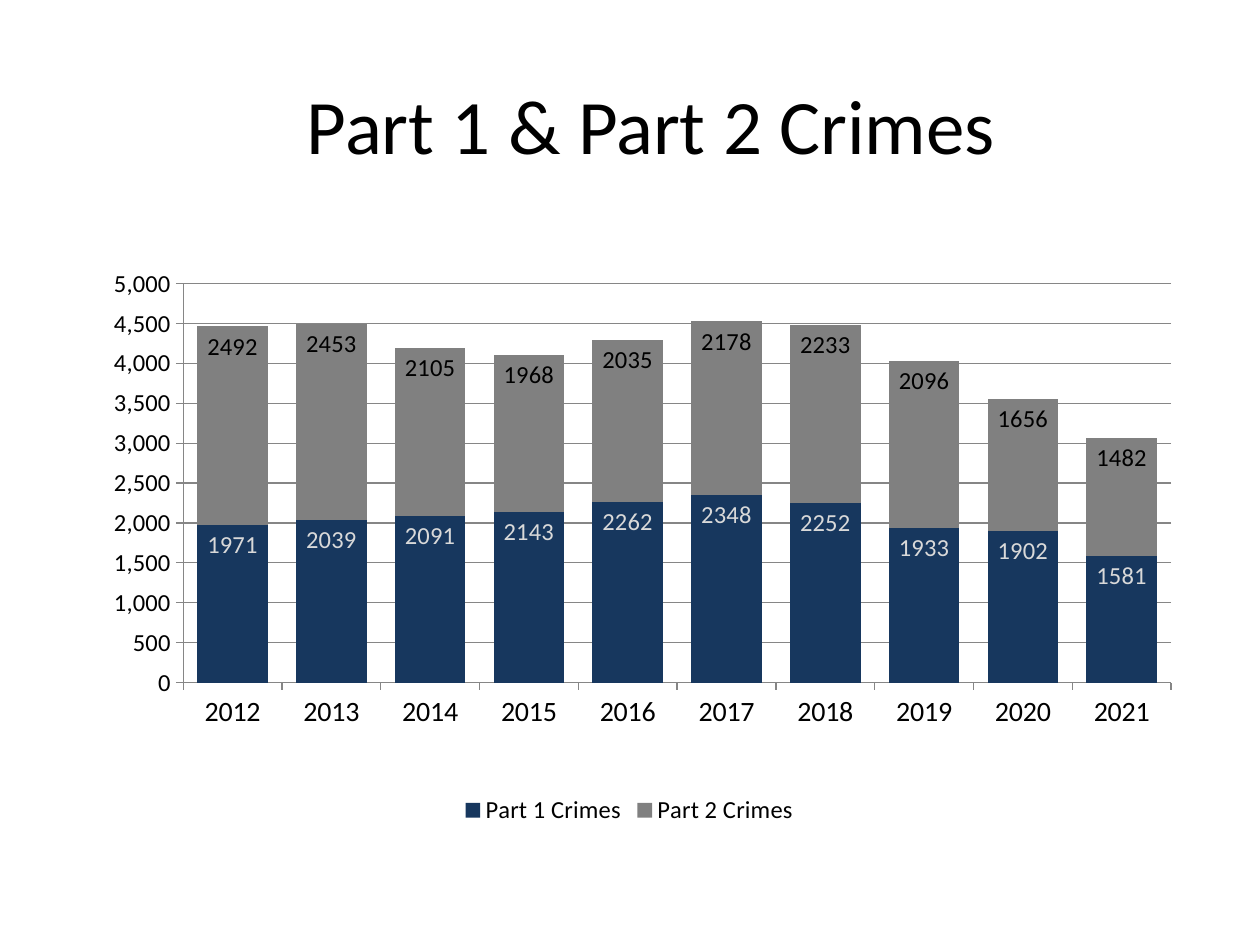
import pptx
import pptx.chart.data
import pptx.dml.color
import pptx.enum.chart
import pptx.enum.text
import pptx.oxml
import pptx.oxml.ns
import pptx.util
from pptx.util import Inches

FONT = "Calibri"
COLORS = {
    "text": "000000",
    "part 1": "17375E",
    "part 1 label": "D9D9D9",
    "part 2": "808080",
    "axis": "868686",
}
YEARS = [str(year) for year in range(2012, 2022)]
CRIMES = [
    ("Part 1 Crimes", [1971, 2039, 2091, 2143, 2262, 2348, 2252, 1933, 1902, 1581],
     "part 1", "part 1 label"),
    ("Part 2 Crimes", [2492, 2453, 2105, 1968, 2035, 2178, 2233, 2096, 1656, 1482],
     "part 2", "text"),
]
PLOT_AREA = {"x": 0.099, "y": 0.071, "w": 0.888, "h": 0.678}


def rgb(name):
    return pptx.dml.color.RGBColor.from_string(COLORS[name])


def set_values(target, values):
    for attribute, value in values.items():
        setattr(target, attribute, value)


def style_font(font, size, color="text"):
    set_values(font, {"name": FONT, "size": pptx.util.Pt(size), "bold": False})
    font.color.rgb = rgb(color)


def style_line(line):
    line.color.rgb = rgb("axis")
    line.width = pptx.util.Pt(0.75)


def add_title(slide, text):
    title = slide.shapes.title
    set_values(title, {"left": Inches(0.92), "top": Inches(0.38),
                       "width": Inches(8.5), "height": Inches(1.21)})
    title.text_frame.text = text
    title.text_frame.vertical_anchor = pptx.enum.text.MSO_ANCHOR.MIDDLE
    heading = title.text_frame.paragraphs[0]
    heading.alignment = pptx.enum.text.PP_ALIGN.CENTER
    style_font(heading.runs[0].font, 44)


def place_plot_area(chart):
    """Fix the inner plot area as fractions of the chart frame."""
    plot_area = chart.plots[0]._element.getparent()
    for old_layout in plot_area.findall(pptx.oxml.ns.qn("c:layout")):
        plot_area.remove(old_layout)
    sizes = "".join(f'<c:{key} val="{value}"/>' for key, value in PLOT_AREA.items())
    plot_area.insert(0, pptx.oxml.parse_xml(
        f'<c:layout {pptx.oxml.ns.nsdecls("c")}><c:manualLayout>'
        '<c:layoutTarget val="inner"/><c:xMode val="edge"/><c:yMode val="edge"/>'
        f'{sizes}</c:manualLayout></c:layout>'))


def style_axes(chart):
    outside = pptx.enum.chart.XL_TICK_MARK.OUTSIDE
    for axis, size in ((chart.category_axis, 16), (chart.value_axis, 14)):
        axis.major_tick_mark = outside
        style_font(axis.tick_labels.font, size)
        style_line(axis.format.line)
    values = chart.value_axis
    set_values(values, {"minimum_scale": 0, "maximum_scale": 5000,
                        "major_unit": 500, "has_major_gridlines": True})
    set_values(values.tick_labels, {"number_format": "#,##0",
                                    "number_format_is_linked": False})
    style_line(values.major_gridlines.format.line)


def style_series(series, fill, label_color):
    series.format.fill.solid()
    series.format.fill.fore_color.rgb = rgb(fill)
    series.invert_if_negative = False
    labels = series.data_labels
    set_values(labels, {"show_value": True,
                        "position": pptx.enum.chart.XL_LABEL_POSITION.INSIDE_END})
    style_font(labels.font, 14, label_color)


def add_crime_chart(slide):
    crime_data = pptx.chart.data.CategoryChartData()
    crime_data.categories = YEARS
    for name, counts, _, _ in CRIMES:
        crime_data.add_series(name, counts)
    chart = slide.shapes.add_chart(
        pptx.enum.chart.XL_CHART_TYPE.COLUMN_STACKED,
        Inches(0.58), Inches(1.92), Inches(8.83), Inches(4.67), crime_data).chart
    style_font(chart.font, 18)
    set_values(chart, {"has_title": False, "has_legend": True})
    set_values(chart.legend, {"position": pptx.enum.chart.XL_LEGEND_POSITION.BOTTOM,
                              "include_in_layout": False})
    style_font(chart.legend.font, 14)
    columns = chart.plots[0]
    set_values(columns, {"gap_width": 40, "overlap": 100, "vary_by_categories": False})
    for series, (_, _, fill, label_color) in zip(columns.series, CRIMES):
        style_series(series, fill, label_color)
    style_axes(chart)
    place_plot_area(chart)


def main():
    deck = pptx.Presentation()
    set_values(deck, {"slide_width": Inches(10), "slide_height": Inches(7.5)})
    slide = deck.slides.add_slide(deck.slide_layouts[5])
    add_title(slide, "Part 1 & Part 2 Crimes")
    add_crime_chart(slide)
    deck.save("out.pptx")


if __name__ == "__main__":
    main()
